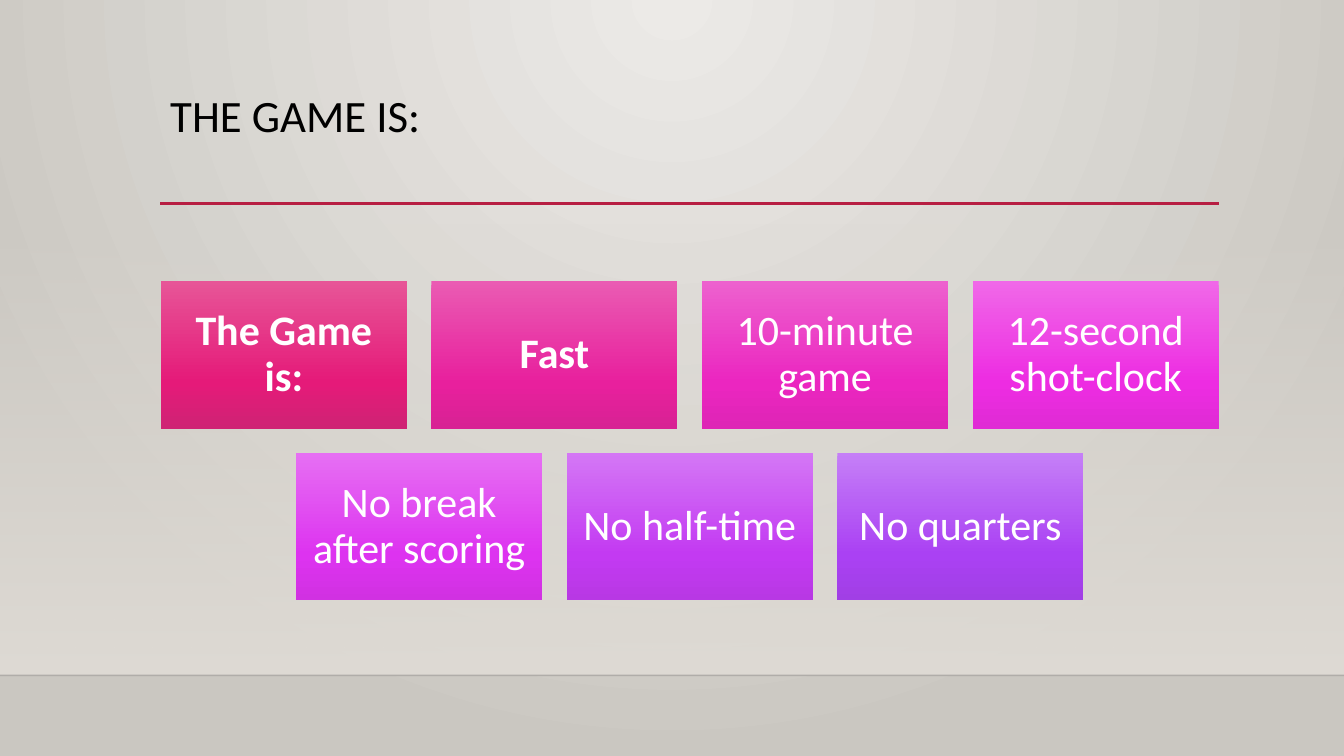
from dataclasses import dataclass
from typing import Optional

from lxml.etree import SubElement
from pptx import Presentation
from pptx.dml.color import RGBColor
from pptx.enum.shapes import MSO_CONNECTOR, MSO_SHAPE
from pptx.enum.text import MSO_ANCHOR as Anchor, PP_ALIGN as Align
from pptx.oxml.ns import qn
from pptx.util import Cm, Pt

SLIDE_W, SLIDE_H = 33.87, 19.05
CONTENT_LEFT, CONTENT_W = 4.04, 26.69
TILE_W, TILE_H, TILE_GAP = 6.2, 3.71, 0.62
TILES_TOP = 7.09
FLOOR_Y = 17.02

FONT = "Calibri"
BLACK = RGBColor(0x00, 0x00, 0x00)
WHITE = RGBColor(0xFF, 0xFF, 0xFF)
CRIMSON = RGBColor(0xB7, 0x1E, 0x42)
HORIZON = RGBColor(0x00, 0x00, 0x01)
WALL = RGBColor(0xDF, 0xDB, 0xD5)
GLOW = RGBColor(0xEC, 0xEA, 0xE7)
STONE = RGBColor(0xCA, 0xC7, 0xC1)


@dataclass(frozen=True)
class Stop:
    percent: int
    color: RGBColor
    opacity: int = 100


@dataclass(frozen=True)
class Tile:
    text: str
    top: RGBColor
    middle: RGBColor
    bottom: RGBColor
    bold: bool = False


TILE_ROWS = [
    [
        Tile("The Game is:", RGBColor(0xE7, 0x55, 0x97), RGBColor(0xE5, 0x1A, 0x79),
             RGBColor(0xCF, 0x23, 0x74), bold=True),
        Tile("Fast", RGBColor(0xEA, 0x5B, 0xB3), RGBColor(0xE8, 0x20, 0x9D),
             RGBColor(0xD8, 0x22, 0x94), bold=True),
        Tile("10-minute game", RGBColor(0xED, 0x61, 0xCE), RGBColor(0xEB, 0x26, 0xC0),
             RGBColor(0xDE, 0x25, 0xB6)),
        Tile("12-second shot-clock", RGBColor(0xF0, 0x68, 0xE8), RGBColor(0xED, 0x2C, 0xE2),
             RGBColor(0xE0, 0x2B, 0xD5)),
    ],
    [
        Tile("No break after scoring", RGBColor(0xE6, 0x6F, 0xF3), RGBColor(0xDD, 0x33, 0xF0),
             RGBColor(0xD1, 0x31, 0xE2)),
        Tile("No half-time", RGBColor(0xD4, 0x77, 0xF5), RGBColor(0xC3, 0x3A, 0xF2),
             RGBColor(0xB8, 0x38, 0xE4)),
        Tile("No quarters", RGBColor(0xC5, 0x7F, 0xF7), RGBColor(0xAA, 0x41, 0xF3),
             RGBColor(0xA1, 0x3F, 0xE5)),
    ],
]


def set_opacity(color_element, percent: int) -> None:
    SubElement(color_element, qn("a:alpha"), val=str(percent * 1000))


def apply_gradient(fill, owner, stops: list[Stop], radial: bool = False) -> None:
    fill.gradient()
    gradient = next(owner.iter(qn("a:gradFill")))
    gradient.clear()
    gradient.set("rotWithShape", "1")
    stop_list = SubElement(gradient, qn("a:gsLst"))
    for stop in stops:
        entry = SubElement(stop_list, qn("a:gs"), pos=str(stop.percent * 1000))
        color = SubElement(entry, qn("a:srgbClr"), val=str(stop.color))
        if stop.opacity < 100:
            set_opacity(color, stop.opacity)
    if radial:
        circle = SubElement(gradient, qn("a:path"), path="circle")
        SubElement(circle, qn("a:fillToRect"), l="43000", t="0", r="43000", b="100000")
    else:
        SubElement(gradient, qn("a:lin"), ang="5400000", scaled="0")


def add_gradient_box(slide, left: float, top: float, width: float, height: float,
                     stops: list[Stop]):
    box = slide.shapes.add_shape(MSO_SHAPE.RECTANGLE, Cm(left), Cm(top), Cm(width), Cm(height))
    box.shadow.inherit = False
    box.line.fill.background()
    apply_gradient(box.fill, box.element, stops)
    return box


def add_rule(slide, left: float, y: float, width: float, color: RGBColor,
             weight: float, opacity: int = 100) -> None:
    rule = slide.shapes.add_connector(
        MSO_CONNECTOR.STRAIGHT, Cm(left), Cm(y), Cm(left + width), Cm(y))
    rule.line.color.rgb = color
    rule.line.width = Pt(weight)
    if opacity < 100:
        set_opacity(next(rule.element.iter(qn("a:srgbClr"))), opacity)
    SubElement(rule.element.spPr, qn("a:effectLst"))


def write_text(frame, text: str, *, size: float, color: RGBColor, bold: bool = False,
               align: Align = Align.LEFT, anchor: Anchor = Anchor.TOP,
               inset: Optional[float] = None) -> None:
    frame.word_wrap = True
    frame.vertical_anchor = anchor
    if inset is not None:
        frame.margin_left = frame.margin_right = Cm(inset)
        frame.margin_top = frame.margin_bottom = Cm(inset)
    paragraph = frame.paragraphs[0]
    paragraph.alignment = align
    paragraph.line_spacing = 0.9
    run = paragraph.add_run()
    run.text = text
    run.font.name = FONT
    run.font.size = Pt(size)
    run.font.bold = bold
    run.font.color.rgb = color


def add_tile_row(slide, tiles: list[Tile], top: float) -> None:
    pitch = TILE_W + TILE_GAP
    row_width = len(tiles) * pitch - TILE_GAP
    row_left = CONTENT_LEFT + (CONTENT_W - row_width) / 2
    for column, tile in enumerate(tiles):
        stops = [Stop(0, tile.top), Stop(69, tile.middle), Stop(100, tile.bottom)]
        box = add_gradient_box(slide, row_left + column * pitch, top, TILE_W, TILE_H, stops)
        write_text(box.text_frame, tile.text, size=30, color=WHITE, bold=tile.bold,
                   align=Align.CENTER, anchor=Anchor.MIDDLE, inset=0.3)


def main() -> None:
    deck = Presentation()
    deck.slide_width, deck.slide_height = Cm(SLIDE_W), Cm(SLIDE_H)
    slide = deck.slides.add_slide(deck.slide_layouts[6])

    apply_gradient(slide.background.fill, slide.element,
                   [Stop(0, GLOW), Stop(100, STONE)], radial=True)
    add_gradient_box(slide, 0, 5.61, SLIDE_W, FLOOR_Y - 5.61,
                     [Stop(0, WALL, opacity=0), Stop(100, WALL)])
    add_rule(slide, 0, FLOOR_Y, SLIDE_W, HORIZON, 1, opacity=20)
    add_rule(slide, CONTENT_LEFT, 5.13, CONTENT_W, CRIMSON, 2.5)

    title = slide.shapes.add_textbox(Cm(CONTENT_LEFT), Cm(2.24), Cm(CONTENT_W), Cm(2.92))
    write_text(title.text_frame, "THE GAME IS:", size=32, color=BLACK)

    for row, tiles in enumerate(TILE_ROWS):
        add_tile_row(slide, tiles, TILES_TOP + row * (TILE_H + TILE_GAP))

    deck.save("out.pptx")


if __name__ == "__main__":
    main()
